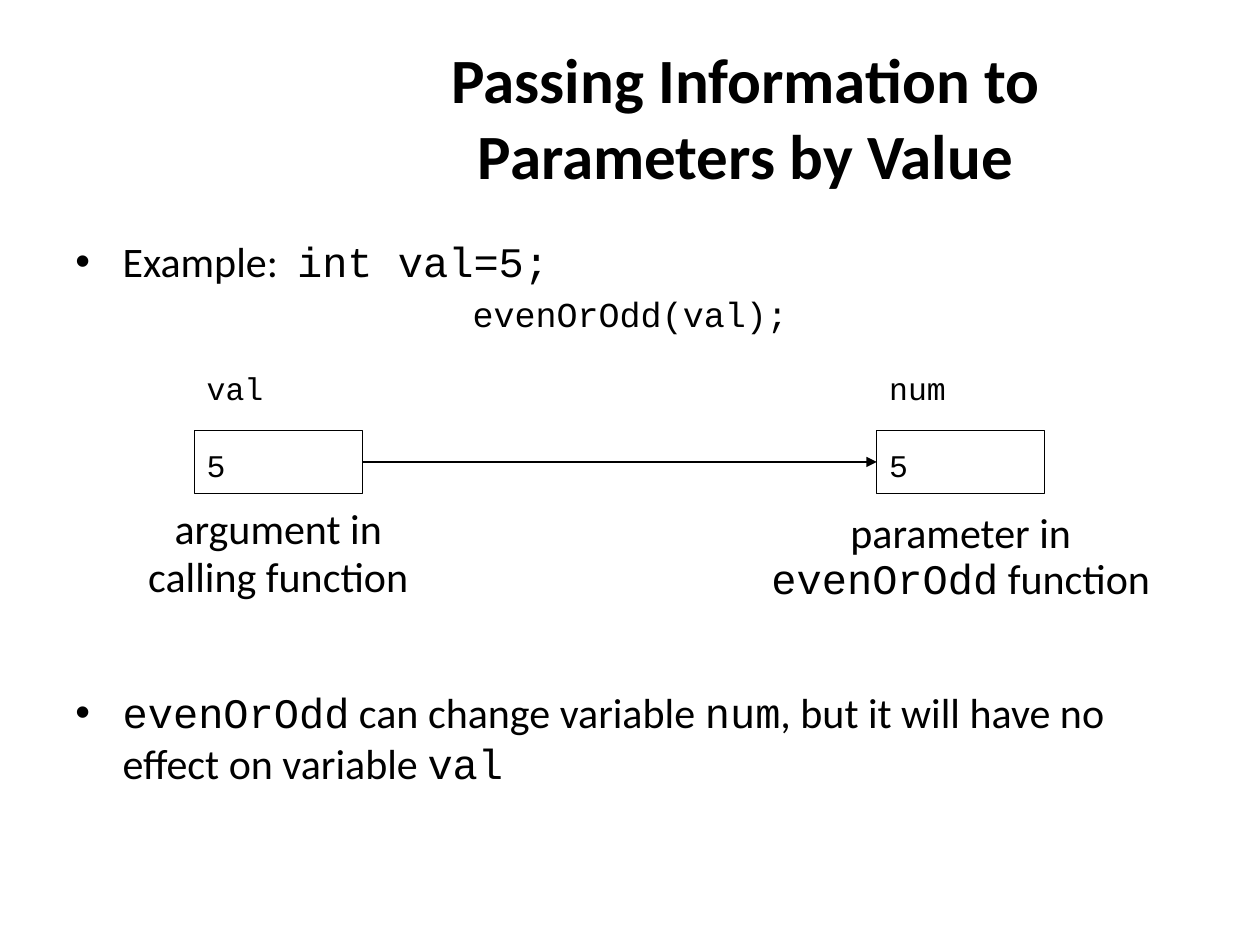
from pptx import Presentation
from pptx.dml.color import RGBColor
from pptx.enum.shapes import MSO_CONNECTOR, MSO_SHAPE
from pptx.enum.text import MSO_ANCHOR, PP_ALIGN
from pptx.oxml.xmlchemy import OxmlElement
from pptx.util import Pt

BLACK = RGBColor(0, 0, 0)
PROSE, CODE = "Calibri", "Courier New"

TITLE = "Passing Information to Parameters by Value"
EXAMPLE = [("Example:  ", PROSE), ("int val=5;", CODE)]
CALL = [("evenOrOdd(val);", CODE)]
CONCLUSION = [
    ("evenOrOdd", CODE),
    (" can change variable ", PROSE),
    ("num", CODE),
    (", but it will have no effect on variable ", PROSE),
    ("val", CODE),
]
VARIABLES = [
    {"name": "val", "value": "5", "left": 111, "spacing": 0.8,
     "caption": [[("argument in", PROSE)], [("calling function", PROSE)]],
     "caption_area": (60, 289, 198, 60)},
    {"name": "num", "value": "5", "left": 501, "spacing": 0.75,
     "caption": [[("parameter in", PROSE)],
                 [("evenOrOdd", CODE), (" function", PROSE)]],
     "caption_area": (429, 292.5, 240, 58)},
]
CELL_TOP, CELL_WIDTH, CELL_HEIGHT = 246, 96, 36
NAME_TOP, NAME_HEIGHT = 207.5, 36
DIAGRAM_GAP = 201


def add_runs(paragraph, runs, size, bold=False):
    for text, font_name in runs:
        run = paragraph.add_run()
        run.text = text
        run.font.name = font_name
        run.font.size = Pt(size)
        run.font.bold = bold
        run.font.color.rgb = BLACK


def add_text(slide, area, lines, size, align=PP_ALIGN.LEFT, spacing=None,
             bold=False, anchor=MSO_ANCHOR.TOP):
    frame = slide.shapes.add_textbox(*map(Pt, area)).text_frame
    frame.word_wrap = True
    frame.vertical_anchor = anchor
    for index, runs in enumerate(lines):
        paragraph = frame.add_paragraph() if index else frame.paragraphs[0]
        paragraph.alignment = align
        if spacing:
            paragraph.line_spacing = spacing
        if index:
            paragraph.space_before = Pt(size * 0.2)
        add_runs(paragraph, runs, size, bold)


def indent(paragraph, left, hanging=0):
    properties = paragraph._p.get_or_add_pPr()
    properties.set("marL", str(Pt(left)))
    properties.set("indent", str(Pt(-hanging)))
    if hanging:
        font = OxmlElement("a:buFont")
        font.set("typeface", "Arial")
        bullet = OxmlElement("a:buChar")
        bullet.set("char", "•")
        properties.extend([font, bullet])


def add_body(slide):
    frame = slide.shapes.add_textbox(Pt(36), Pt(131), Pt(648), Pt(351)).text_frame
    frame.word_wrap = True
    example = frame.paragraphs[0]
    indent(example, 27, 27)
    add_runs(example, EXAMPLE, 24)
    call = frame.add_paragraph()
    indent(call, 227)
    call.space_before = Pt(4)
    add_runs(call, CALL, 20)
    conclusion = frame.add_paragraph()
    indent(conclusion, 27, 27)
    conclusion.space_before = Pt(DIAGRAM_GAP)
    add_runs(conclusion, CONCLUSION, 24)


def add_variable(slide, variable):
    left = variable["left"]
    add_text(slide, (left, NAME_TOP, CELL_WIDTH, NAME_HEIGHT),
             [[(variable["name"], CODE)]], 18)
    cell = slide.shapes.add_shape(MSO_SHAPE.RECTANGLE, Pt(left), Pt(CELL_TOP),
                                  Pt(CELL_WIDTH), Pt(CELL_HEIGHT))
    cell.shadow.inherit = False
    cell.fill.background()
    cell.line.color.rgb = BLACK
    cell.line.width = Pt(0.75)
    frame = cell.text_frame
    frame.word_wrap = False
    frame.margin_top = Pt(7.2)
    frame.vertical_anchor = MSO_ANCHOR.MIDDLE
    frame.paragraphs[0].alignment = PP_ALIGN.LEFT
    add_runs(frame.paragraphs[0], [(variable["value"], CODE)], 18)
    add_text(slide, variable["caption_area"], variable["caption"], 24,
             PP_ALIGN.CENTER, variable["spacing"])
    return cell


def add_arrow(slide, argument, parameter):
    arrow = slide.shapes.add_connector(MSO_CONNECTOR.STRAIGHT, 0, 0, 0, 0)
    arrow.begin_connect(argument, 3)
    arrow.end_connect(parameter, 1)
    arrow.line.color.rgb = BLACK
    arrow.line.width = Pt(0.75)
    head = OxmlElement("a:tailEnd")
    head.set("type", "triangle")
    arrow.line._get_or_add_ln().append(head)
    arrow._element.spPr.append(OxmlElement("a:effectLst"))


def main():
    deck = Presentation()
    deck.slide_width, deck.slide_height = Pt(720), Pt(540)
    slide = deck.slides.add_slide(deck.slide_layouts[6])
    add_text(slide, (168, 21.6, 516, 90), [[(TITLE, PROSE)]], 36,
             PP_ALIGN.CENTER, bold=True, anchor=MSO_ANCHOR.MIDDLE)
    add_body(slide)
    argument, parameter = [add_variable(slide, variable) for variable in VARIABLES]
    add_arrow(slide, argument, parameter)
    deck.save("out.pptx")


if __name__ == "__main__":
    main()
